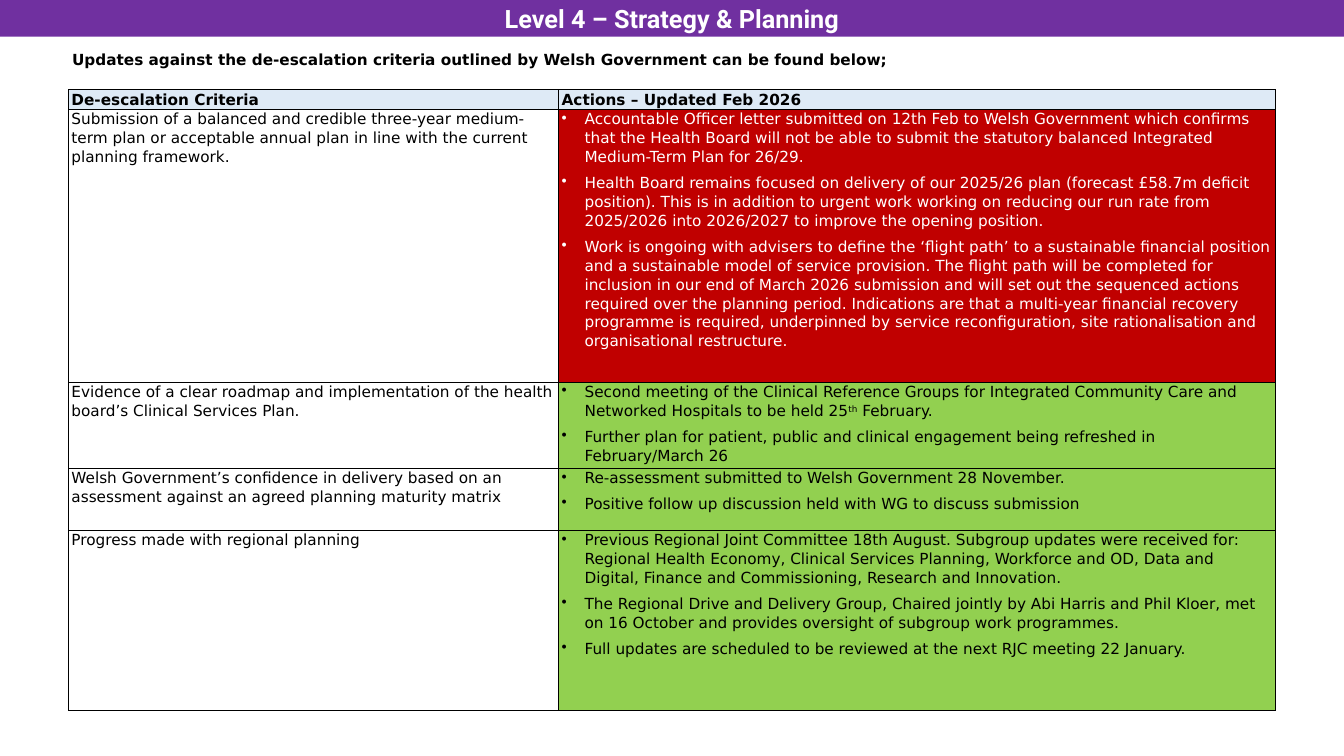
from lxml import etree
from pptx import Presentation
from pptx.dml.color import RGBColor
from pptx.enum.shapes import MSO_SHAPE
from pptx.enum.text import MSO_ANCHOR, MSO_AUTO_SIZE, PP_ALIGN
from pptx.oxml.ns import qn
from pptx.util import Pt

RECTANGLE = MSO_SHAPE.RECTANGLE
MIDDLE = MSO_ANCHOR.MIDDLE
GROW = MSO_AUTO_SIZE.SHAPE_TO_FIT_TEXT
CENTER = PP_ALIGN.CENTER
BLACK, WHITE, PURPLE = "000000", "FFFFFF", "7030A0"
PALE_BLUE, RED, GREEN = "DEEAF6", "C00000", "92D050"


def paint(color_format, color):
    color_format.rgb = RGBColor.from_string(color)


def style(para, color, bold=False, size=18, font="DejaVu Sans", after=8, spacing=1.07):
    para.line_spacing = spacing
    para.space_after = Pt(after)
    para.font.name = font
    para.font.size = Pt(size)
    para.font.bold = bold
    paint(para.font.color, color)


deck = Presentation()
deck.slide_width, deck.slide_height = Pt(1583.28), Pt(890.64)
page = deck.slides.add_slide(deck.slide_layouts[6])

# Title band
band = page.shapes.add_shape(RECTANGLE, 0, 0, deck.slide_width, Pt(43.2))
band.shadow.inherit = False
band.fill.solid()
paint(band.fill.fore_color, PURPLE)
band.line.fill.background()
band.text_frame.vertical_anchor = MIDDLE
para = band.text_frame.paragraphs[0]
para.text = "Level 4 – Strategy & Planning"
para.alignment = CENTER
style(para, WHITE, True, 29.7, "Roboto", 9.9, 1)

# Introduction
box = page.shapes.add_textbox(Pt(59.8), Pt(54.7), Pt(1103.8), Pt(29.5))
box.text_frame.word_wrap = True
box.text_frame.auto_size = GROW
para = box.text_frame.paragraphs[0]
para.text = "Updates against the de-escalation criteria outlined by Welsh Government can be found below;"
para._p.get_or_add_pPr().set("marL", str(Pt(18)))
style(para, BLACK, True)

# Criteria, colour of the actions cell, its text colour, actions (^ encloses superscript)
criteria = [
    ("Submission of a balanced and credible three-year medium-term plan or acceptable annual plan "
     "in line with the current planning framework.", RED, WHITE, [
         "Accountable Officer letter submitted on 12th Feb to Welsh Government which confirms that the "
         "Health Board will not be able to submit the statutory balanced Integrated Medium-Term Plan for 26/29.",
         "Health Board remains focused on delivery of our 2025/26 plan (forecast £58.7m deficit position). "
         "This is in addition to urgent work working on reducing our run rate from 2025/2026 into 2026/2027 "
         "to improve the opening position.",
         "Work is ongoing with advisers to define the ‘flight path’ to a sustainable financial position and "
         "a sustainable model of service provision. The flight path will be completed for inclusion in our "
         "end of March 2026 submission and will set out the sequenced actions required over the planning "
         "period. Indications are that a multi-year financial recovery programme is required, underpinned by "
         "service reconfiguration, site rationalisation and organisational restructure."]),
    ("Evidence of a clear roadmap and implementation of the health board’s Clinical Services Plan.",
     GREEN, BLACK, [
         "Second meeting of the Clinical Reference Groups for Integrated Community Care and Networked "
         "Hospitals to be held 25^th^ February.",
         "Further plan for patient, public and clinical engagement being refreshed in February/March 26"]),
    ("Welsh Government’s confidence in delivery based on an assessment against an agreed planning "
     "maturity matrix", GREEN, BLACK, [
         "Re-assessment submitted to Welsh Government 28 November.",
         "Positive follow up discussion held with WG to discuss submission"]),
    ("Progress made with regional planning", GREEN, BLACK, [
        "Previous Regional Joint Committee 18th August. Subgroup updates were received for: Regional Health "
        "Economy, Clinical Services Planning, Workforce and OD, Data and Digital, Finance and Commissioning, "
        "Research and Innovation.",
        "The Regional Drive and Delivery Group, Chaired jointly by Abi Harris and Phil Kloer, met on "
        "16 October and provides oversight of subgroup work programmes.",
        "Full updates are scheduled to be reviewed at the next RJC meeting 22 January."]),
]

# Table grid
column_widths = [577.5, 844.5]
row_heights = [22.5, 321.5, 101.5, 73, 212]
table = page.shapes.add_table(len(row_heights), len(column_widths), Pt(80.6), Pt(105.8),
                              Pt(sum(column_widths)), Pt(sum(row_heights))).table
table.first_row = table.horz_banding = False
for column, width in zip(table.columns, column_widths):
    column.width = Pt(width)
for row, height in zip(table.rows, row_heights):
    row.height = Pt(height)

# Cell margins and borders
for cell in table.iter_cells():
    cell.margin_left = cell.margin_right = Pt(3.6)
    cell.margin_top = cell.margin_bottom = 0
    for side in ("a:lnL", "a:lnR", "a:lnT", "a:lnB"):
        border = etree.SubElement(cell._tc.get_or_add_tcPr(), qn(side), w=str(Pt(1)))
        solid = etree.SubElement(border, qn("a:solidFill"))
        etree.SubElement(solid, qn("a:srgbClr"), val=BLACK)

# Header row
for cell, heading in zip(table.rows[0].cells, ["De-escalation Criteria", "Actions – Updated Feb 2026"]):
    cell.fill.solid()
    paint(cell.fill.fore_color, PALE_BLUE)
    cell.text = heading
    style(cell.text_frame.paragraphs[0], BLACK, True)

# Criteria rows
for number, (criterion, fill, color, actions) in enumerate(criteria, 1):
    left, right = table.rows[number].cells
    left.fill.background()
    left.text = criterion
    style(left.text_frame.paragraphs[0], BLACK)
    right.fill.solid()
    paint(right.fill.fore_color, fill)
    for position, action in enumerate(actions):
        frame = right.text_frame
        para = frame.add_paragraph() if position else frame.paragraphs[0]
        properties = para._p.get_or_add_pPr()
        properties.set("marL", str(Pt(27)))
        properties.set("indent", str(Pt(-27)))
        etree.SubElement(properties, qn("a:buChar"), char="•")
        for part, words in enumerate(action.split("^")):
            span = para.add_run()
            span.text = words
            if part % 2:
                span._r.get_or_add_rPr().set("baseline", "30000")
        style(para, color)

deck.save("out.pptx")
